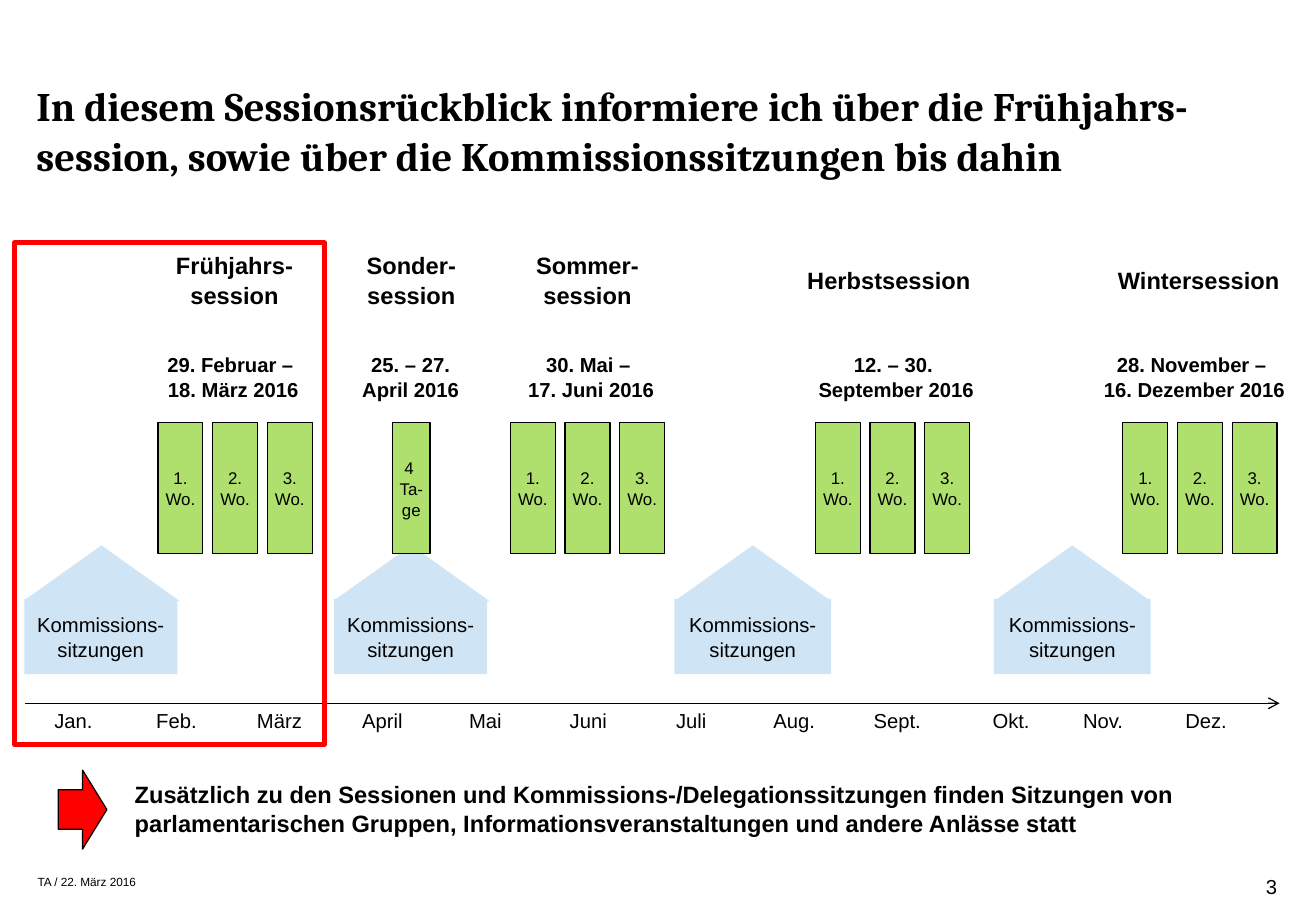
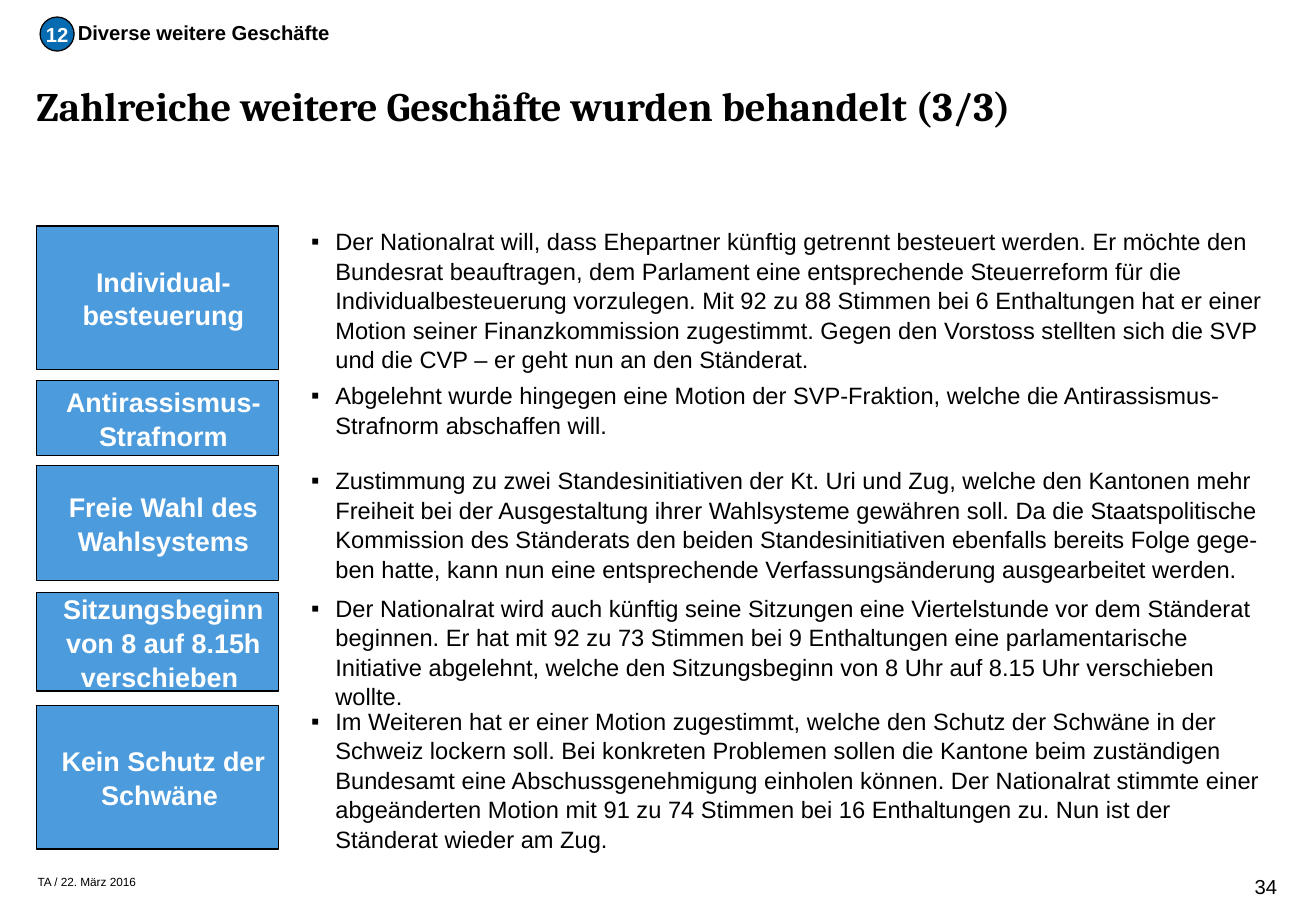
from pptx import Presentation
from pptx.dml.color import RGBColor as RGB
from pptx.enum.shapes import MSO_CONNECTOR as LINE, MSO_SHAPE as SHAPE
from pptx.enum.text import MSO_ANCHOR as ANCHOR, MSO_AUTO_SIZE as AUTO, PP_ALIGN as ALIGN
from pptx.oxml.ns import qn
from pptx.util import Inches, Pt
from lxml import etree

COL = {"black": "000000", "white": "FFFFFF", "green": "AFE06E", "pale": "CFE4F5",
       "blue": "4C9BDC", "badge": "066BB0", "red": "FF0000"}
SIDES = ("margin_left", "margin_top", "margin_right", "margin_bottom")
PAD, FLAT = (0.1, 0.05, 0.1, 0.05), (0, 0, 0, 0)
MID, CEN = ANCHOR.MIDDLE, ALIGN.CENTER


def write(shape, text, size, bold=False, color="black", name="Arial", align=ALIGN.LEFT,
          ins=PAD, anchor=ANCHOR.TOP, wrap=True, bullet=None):
    frame = shape.text_frame
    frame.text = text
    look = {"word_wrap": wrap, "auto_size": AUTO.NONE, "vertical_anchor": anchor}
    look.update(zip(SIDES, map(Inches, ins)))
    for key, val in look.items():
        setattr(frame, key, val)
    for para in frame.paragraphs:
        para.alignment, para.line_spacing = align, 1.04
        if bullet:
            props = para._p.get_or_add_pPr()
            props.set("marL", str(Inches(0.2)))
            props.set("indent", str(-Inches(0.2)))
            etree.SubElement(props, qn("a:buFont")).set("typeface", "Arial")
            etree.SubElement(props, qn("a:buChar")).set("char", bullet)
        for key, val in {"name": name, "size": Pt(size), "bold": bold}.items():
            setattr(para.font, key, val)
        para.font.color.rgb = RGB.from_string(COL[color])


def draw(slide, at, kind=None, fill=None, line=None, width=0.75, text="", **form):
    """Add a preset shape, or a text box when no kind is given."""
    spot = map(Inches, at)
    if kind is None:
        shape = slide.shapes.add_textbox(*spot)
    else:
        shape = slide.shapes.add_shape(kind, *spot)
        shape.shadow.inherit = False
        for part, color in ((shape.fill, fill), (shape.line.fill, line)):
            if color:
                part.solid()
                part.fore_color.rgb = RGB.from_string(COL[color])
            else:
                part.background()
        if line:
            shape.line.width = Pt(width)
    if text:
        write(shape, text, **form)
    return shape


deck = Presentation()
deck.slide_width, deck.slide_height = Inches(10.83), Inches(7.5)

# Title, footer and page number of every slide
slides = []
for title, width, page in (
        ("In diesem Sessionsrückblick informiere ich über die Frühjahrs-session, "
         "sowie über die Kommissionssitzungen bis dahin", 10.38, "3"),
        ("Zahlreiche weitere Geschäfte wurden behandelt (3/3)", 10.21, "34")):
    slide = deck.slides.add_slide(deck.slide_layouts[5])
    head = slide.shapes.title
    head.left, head.top, head.width, head.height = map(Inches, (0.3, 0.65, width, 0.78))
    write(head, title, 24, bold=True, name="Cambria", ins=FLAT)
    draw(slide, (0.31, 7.2, 0.84, 0.12), text="TA / 22. März 2016", size=7,
         ins=FLAT, wrap=False)
    draw(slide, (9.92, 7.19, 0.59, 0.2), text=page, size=12, ins=FLAT, align=ALIGN.RIGHT)
    slides.append(slide)
year, topics = slides

# Year plan: committee meetings
for left, roof, width in ((0.2, 0.19, 1.26), (2.75, 2.74, 1.26),
                          (5.55, 5.55, 1.29), (8.18, 8.18, 1.29)):
    draw(year, (left, 4.93, width, 0.62), SHAPE.RECTANGLE, "pale",
         text="Kommissions-sitzungen", size=12, align=CEN, anchor=MID)
    draw(year, (roof, 4.49, 1.29, 0.46), SHAPE.FLOWCHART_EXTRACT, "pale")

# Year plan: sessions with name, dates and weeks
WEEKS = ("1. Wo.", "2. Wo.", "3. Wo.")
for name, at, dates, when, start, wide, weeks in (
        ("Frühjahrs-\nsession", (1.09, 2.01, 1.68, 0.57),
         "29. Februar – \n18. März 2016", (1.27, 1.3), 1.3, 0.37, WEEKS),
        ("Sonder-\nsession", (2.89, 2.01, 0.99, 0.57),
         "25. – 27.\nApril 2016", (2.88, 1), 3.23, 0.31, ("4 \nTa-ge",)),
        ("Sommer-\nsession", (4.05, 2.01, 1.57, 0.57),
         "30. Mai – \n17. Juni 2016", (4.14, 1.45), 4.2, 0.37, WEEKS),
        ("Herbstsession", (6.53, 2.13, 1.57, 0.34),
         "12. – 30. \nSeptember 2016", (6.63, 1.49), 6.71, 0.37, WEEKS),
        ("Wintersession", (9.08, 2.13, 1.57, 0.34),
         "28. November – \n16. Dezember 2016", (8.98, 1.7), 9.24, 0.37, WEEKS)):
    draw(year, at, text=name, size=14, bold=True, align=CEN)
    left, width = when
    draw(year, (left, 2.84, width, 0.5), text=dates, size=12, bold=True, align=CEN,
         wrap=False)
    for i, week in enumerate(weeks):
        draw(year, (start + 0.45 * i, 3.48, wide, 1.08), SHAPE.RECTANGLE, "green", "black",
             text=week, size=10, align=CEN, ins=FLAT, anchor=MID)

# Year plan: time axis and months
axis = year.shapes.add_connector(LINE.STRAIGHT, *map(Inches, (0.21, 5.79, 10.53, 5.79)))
axis.line.color.rgb = RGB.from_string(COL["black"])
axis.line.width = Pt(0.75)
etree.SubElement(axis.line._get_or_add_ln(), qn("a:tailEnd")).set("type", "arrow")
etree.SubElement(axis._element.spPr, qn("a:effectLst"))
draw(year, (0.12, 2, 2.55, 4.13), SHAPE.RECTANGLE, line="red", width=3)
MONTHS = ("Jan.", "Feb.", "März", "April", "Mai", "Juni",
          "Juli", "Aug.", "Sept.", "Okt.", "Nov.", "Dez.")
for i, month in enumerate(MONTHS):
    shift = 0.09 if month == "Okt." else 0
    draw(year, (0.21 + 9.32 / 11 * i + shift, 5.77, 0.79, 0.31), text=month, size=12,
         align=CEN)

# Year plan: closing remark
draw(year, (1.01, 6.36, 9.52, 0.65), SHAPE.RECTANGLE, "white", size=14, bold=True,
     text="Zusätzlich zu den Sessionen und Kommissions-/Delegationssitzungen finden "
          "Sitzungen von parlamentarischen Gruppen, Informationsveranstaltungen und "
          "andere Anlässe statt")
draw(year, (0.48, 6.34, 0.4, 0.65), SHAPE.RIGHT_ARROW, "red", "black")

# Topics: chapter mark
draw(topics, (0.64, 0.16, 2.09, 0.2), text="Diverse weitere Geschäfte", size=12, bold=True,
     ins=FLAT, wrap=False)
draw(topics, (0.33, 0.14, 0.28, 0.28), SHAPE.OVAL, "badge", "black", text="12", size=12,
     bold=True, color="white", align=CEN, ins=FLAT, anchor=MID, wrap=False)

# Topics: label and text in each row
for top, tall, label, body in (
        (1.86, 1.18, "Individual-besteuerung",
         "Der Nationalrat will, dass Ehepartner künftig getrennt besteuert werden. Er möchte "
         "den Bundesrat beauftragen, dem Parlament eine entsprechende Steuerreform für die "
         "Individualbesteuerung vorzulegen. Mit 92 zu 88 Stimmen bei 6 Enthaltungen hat er "
         "einer Motion seiner Finanzkommission zugestimmt. Gegen den Vorstoss stellten sich "
         "die SVP und die CVP – er geht nun an den Ständerat."),
        (3.13, 0.62, "Antirassismus-Strafnorm",
         "Abgelehnt wurde hingegen eine Motion der SVP-Fraktion, welche die "
         "Antirassismus-Strafnorm abschaffen will."),
        (3.83, 0.95, "Freie Wahl des Wahlsystems",
         "Zustimmung zu zwei Standesinitiativen der Kt. Uri und Zug, welche den Kantonen "
         "mehr Freiheit bei der Ausgestaltung ihrer Wahlsysteme gewähren soll. Da die "
         "Staatspolitische Kommission des Ständerats den beiden Standesinitiativen ebenfalls "
         "bereits Folge gege-ben hatte, kann nun eine entsprechende Verfassungsänderung "
         "ausgearbeitet werden."),
        (4.88, 0.81, "Sitzungsbeginn von 8 auf 8.15h verschieben ",
         "Der Nationalrat wird auch künftig seine Sitzungen eine Viertelstunde vor dem "
         "Ständerat beginnen. Er hat mit 92 zu 73 Stimmen bei 9 Enthaltungen eine "
         "parlamentarische Initiative abgelehnt, welche den Sitzungsbeginn von 8 Uhr auf "
         "8.15 Uhr verschieben wollte."),
        (5.81, 1.18, "Kein Schutz der Schwäne ",
         "Im Weiteren hat er einer Motion zugestimmt, welche den Schutz der Schwäne in der "
         "Schweiz lockern soll. Bei konkreten Problemen sollen die Kantone beim zuständigen "
         "Bundesamt eine Abschussgenehmigung einholen können. Der Nationalrat stimmte einer "
         "abgeänderten Motion mit 91 zu 74 Stimmen bei 16 Enthaltungen zu. Nun ist der "
         "Ständerat wieder am Zug.")):
    draw(topics, (2.56, top, 7.95, tall), text=body, size=14, ins=FLAT, bullet="▪")
    draw(topics, (0.3, top, 1.99, tall), SHAPE.RECTANGLE, "blue", "black", text=label,
         size=16, bold=True, color="white", align=CEN, ins=(0.1, 0, 0, 0), anchor=MID)

deck.save("out.pptx")
